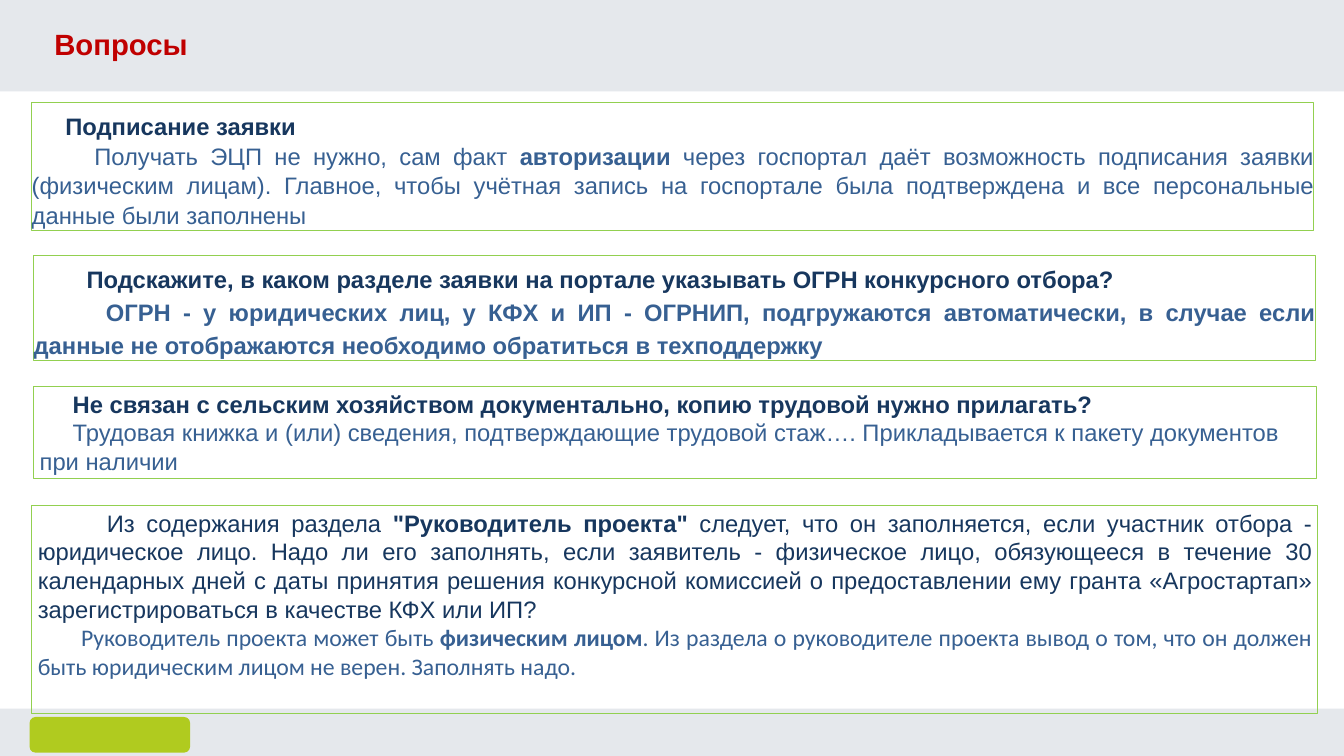
"""Builds the slide with questions and answers on filling in a grant application."""
import pptx
import pptx.dml.color
import pptx.enum.shapes
import pptx.enum.text
import pptx.util

Cm = pptx.util.Cm
Pt = pptx.util.Pt
Shapes = pptx.enum.shapes.MSO_SHAPE
Align = pptx.enum.text.PP_ALIGN

COLORS = {
    "band": "E5E8EC",
    "title": "C00000",
    "question": "17375E",
    "answer": "376092",
    "frame": "92D050",
    "emblem": "B0CB1F",
}

deck = pptx.Presentation()
deck.slide_width, deck.slide_height = Cm(55.85), Cm(31.42)
page = deck.slides.add_slide(deck.slide_layouts[6])


def color(name):
    return pptx.dml.color.RGBColor.from_string(COLORS[name])


def add_block(kind, left, top, width, height, fill=None, line=None):
    box = page.shapes.add_shape(kind, Cm(left), Cm(top), Cm(width), Cm(height))
    box.shadow.inherit = False
    if fill:
        box.fill.solid()
        box.fill.fore_color.rgb = color(fill)
    else:
        box.fill.background()
    if line:
        box.line.color.rgb = color(line)
        box.line.width = Pt(0.75)
    else:
        box.line.fill.background()
    return box


add_block(Shapes.RECTANGLE, 0, 0, 55.85, 3.8, fill="band")
add_block(Shapes.RECTANGLE, 0, 29.45, 55.85, 1.97, fill="band")
add_block(Shapes.ROUNDED_RECTANGLE, 1.23, 29.8, 6.67, 1.48, fill="emblem")

title = page.shapes.add_textbox(Cm(2.26), Cm(1.09), Cm(49.45), Cm(1.48)).text_frame
title.word_wrap = True
title.margin_left = title.margin_top = title.margin_right = title.margin_bottom = 0
heading = title.paragraphs[0]
heading.text = "Вопросы"
heading.font.name = "Arial"
heading.font.size = Pt(34.5)
heading.font.bold = True
heading.font.color.rgb = color("title")

# Each paragraph: colour, font, first-line indent in cm, line spacing in pt, runs of (text, bold).
cards = [
    ((1.32, 4.27, 53.26, 5.31), (0, 0), Align.JUSTIFY, [
        ("question", "Arial", 1.4, 44, [("Подписание заявки", True)]),
        ("answer", "Arial", 2.6, 35, [
            ("Получать ЭЦП не нужно, сам факт ", False),
            ("авторизации", True),
            (" через госпортал даёт возможность подписания заявки (физическим лицам). "
             "Главное, чтобы учётная запись на госпортале была подтверждена и все "
             "персональные данные были заполнены", False)]),
    ]),
    ((1.4, 10.62, 53.26, 4.34), (0, 0), Align.JUSTIFY, [
        ("question", "Arial", 2.2, 44, [
            ("Подскажите, в каком разделе заявки на портале указывать ОГРН "
             "конкурсного отбора?", True)]),
        ("answer", "Arial", 3, 39, [
            ("ОГРН - у юридических лиц, у КФХ и ИП - ОГРНИП, подгружаются автоматически, "
             "в случае если данные не отображаются необходимо обратиться в "
             "техподдержку", True)]),
    ]),
    ((1.4, 16.05, 53.29, 3.84), (0.25, 0.13), Align.LEFT, [
        ("question", "Arial", 1.37, None, [
            ("Не связан с сельским хозяйством документально, копию трудовой нужно "
             "прилагать?", True)]),
        ("answer", "Arial", 1.37, None, [
            ("Трудовая книжка и (или) сведения, подтверждающие трудовой стаж…. "
             "Прикладывается к пакету документов при наличии", False)]),
    ]),
    ((1.32, 21.01, 53.44, 8.64), (0.25, 0.13), Align.JUSTIFY, [
        ("question", "Arial", 2.87, None, [
            ("Из содержания раздела ", False),
            ("\"Руководитель проекта\" ", True),
            ("следует, что он заполняется, если участник отбора - юридическое лицо. "
             "Надо ли его заполнять, если заявитель - физическое лицо, обязующееся в "
             "течение 30 календарных дней с даты принятия решения конкурсной комиссией "
             "о предоставлении ему гранта «Агростартап» зарегистрироваться в качестве "
             "КФХ или ИП?", False)]),
        ("answer", "Calibri", 1.8, None, [
            ("Руководитель проекта может быть ", False),
            ("физическим лицом", True),
            (". Из раздела о руководителе проекта вывод о том, что он должен быть "
             "юридическим лицом не верен. Заполнять надо.", False)]),
    ]),
]

for place, (side, edge), alignment, paragraphs in cards:
    frame = add_block(Shapes.RECTANGLE, *place, line="frame").text_frame
    frame.word_wrap = True
    frame.vertical_anchor = pptx.enum.text.MSO_ANCHOR.TOP
    frame.margin_left = frame.margin_right = Cm(side)
    frame.margin_top = frame.margin_bottom = Cm(edge)
    for number, (tone, font, indent, spacing, spans) in enumerate(paragraphs):
        para = frame.add_paragraph() if number else frame.paragraphs[0]
        para.alignment = alignment
        para._p.get_or_add_pPr().set("indent", str(Cm(indent)))
        if spacing:
            para.line_spacing = Pt(spacing)
        para.font.name = font
        para.font.size = Pt(28)
        para.font.color.rgb = color(tone)
        for text, bold in spans:
            span = para.add_run()
            span.text = text
            span.font.bold = bold

deck.save("out.pptx")
